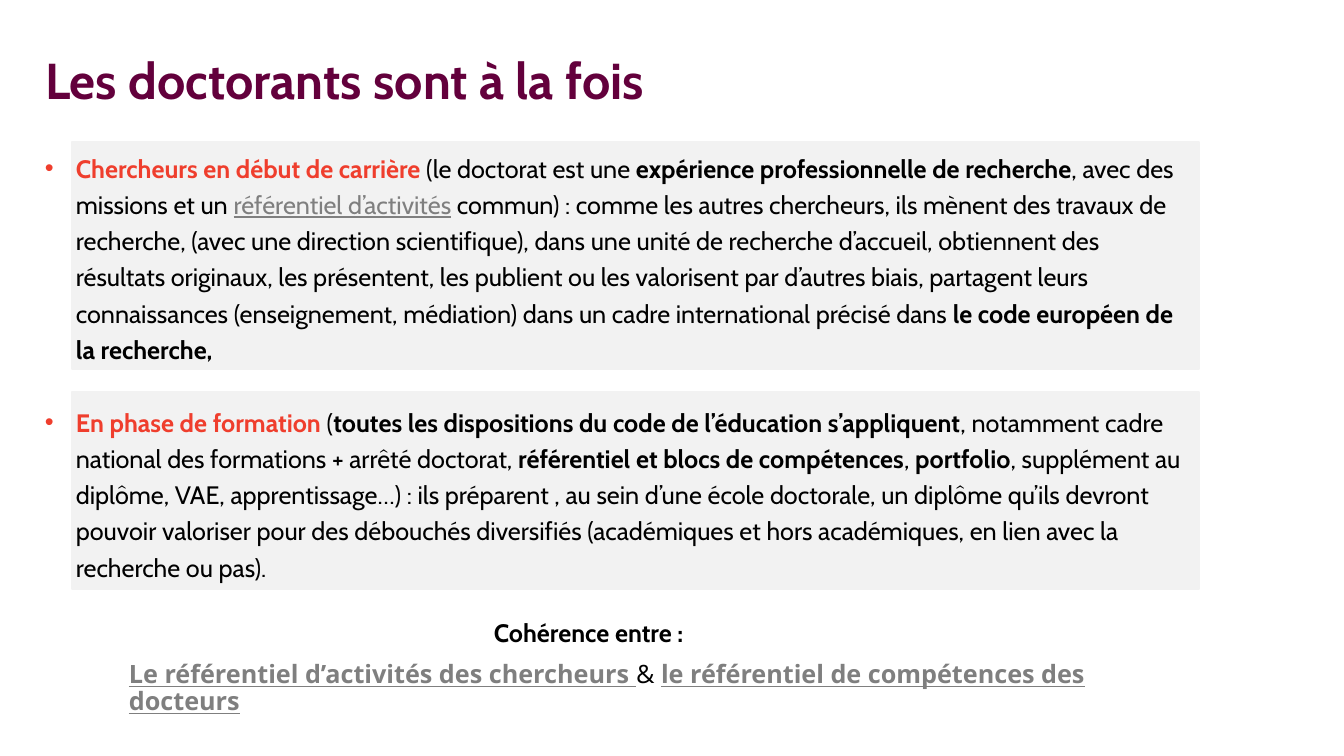
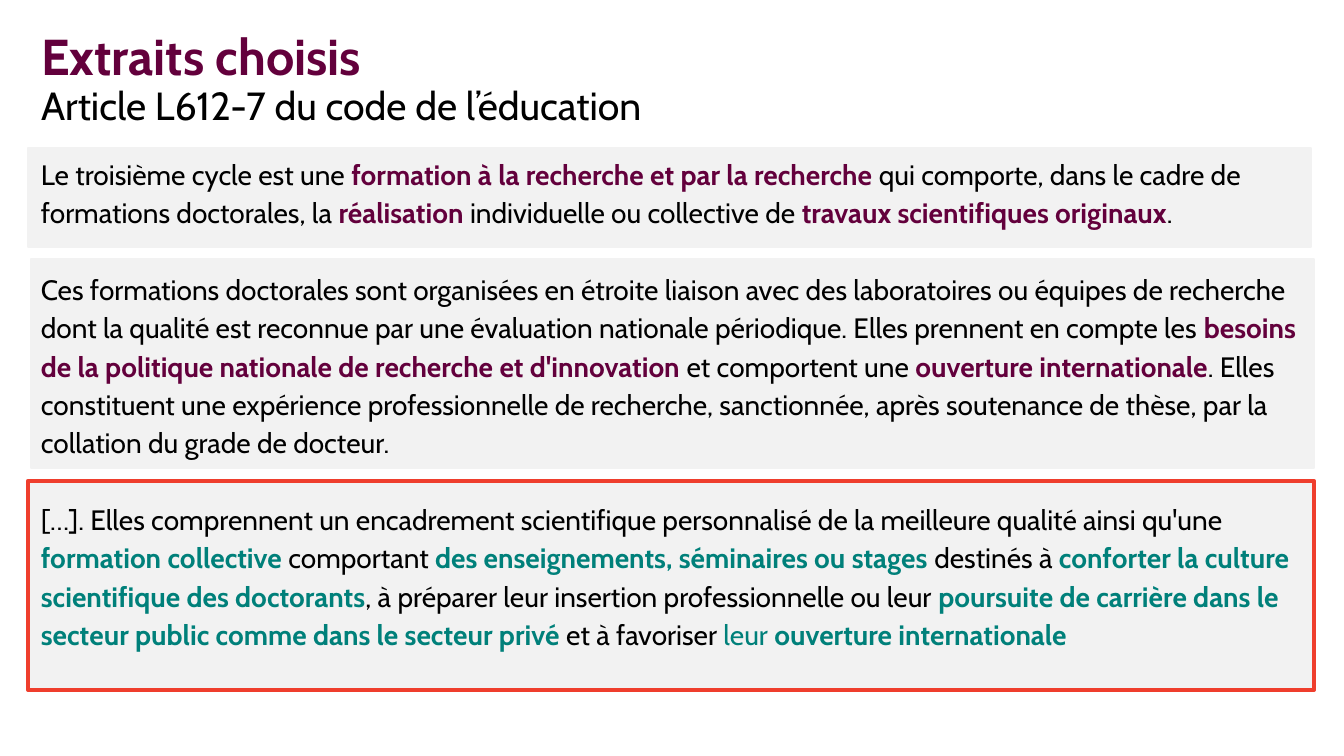
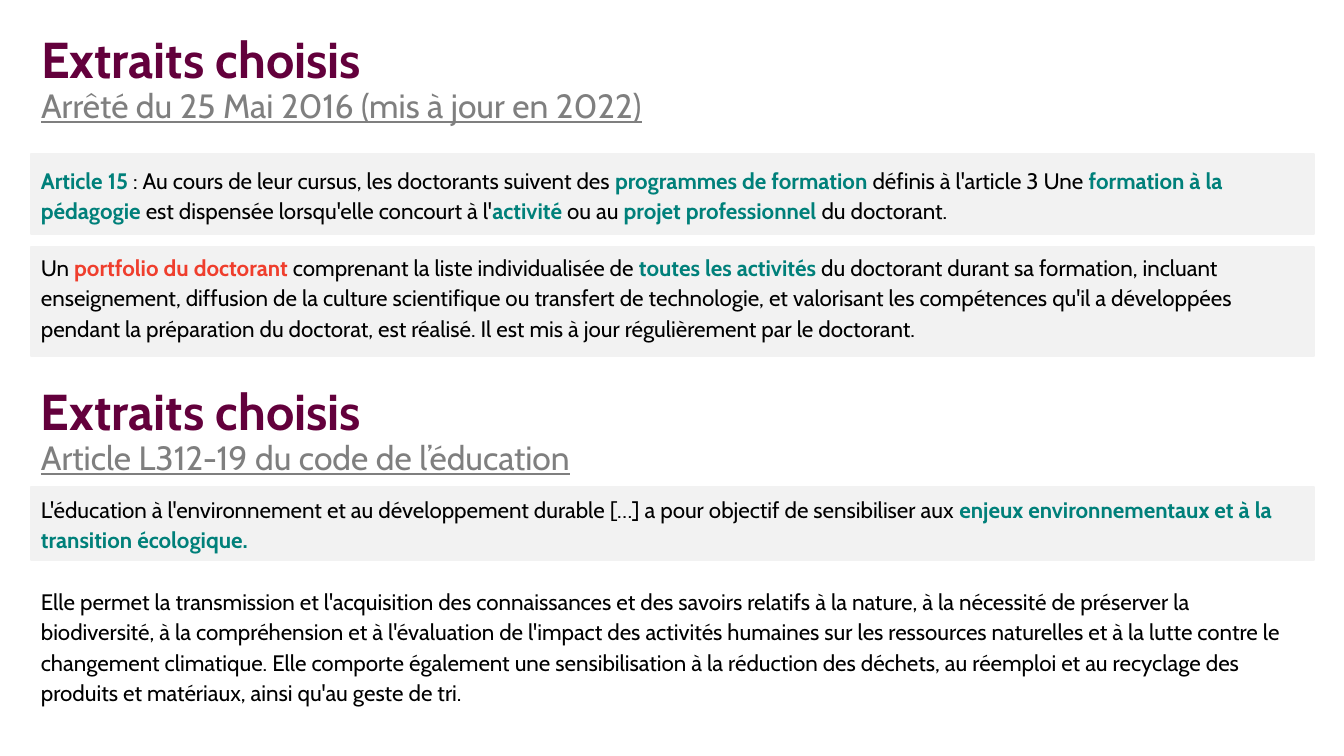
"""Build three slides on the legal framework of doctoral training."""
from lxml.etree import SubElement
from pptx import Presentation
from pptx.dml.color import RGBColor
from pptx.enum.shapes import MSO_SHAPE
from pptx.enum.text import MSO_ANCHOR, MSO_AUTO_SIZE, PP_ALIGN
from pptx.oxml.ns import qn
from pptx.util import Inches, Pt

PLUM = RGBColor(0x63, 0x00, 0x3C)
RED = RGBColor(0xEF, 0x3E, 0x2D)
TEAL = RGBColor(0x00, 0x80, 0x7A)
GREY = RGBColor(0x7F, 0x7F, 0x7F)
BLACK = RGBColor(0x00, 0x00, 0x00)
PALE = RGBColor(0xF2, 0xF2, 0xF2)

SLIDE_W, SLIDE_H = 1344, 756
SCALE = Inches(7.5) / SLIDE_H
FONT = "Cabin"

STYLES = {
    "plain": (BLACK, False, False),
    "bold": (BLACK, True, False),
    "plum": (PLUM, True, False),
    "red": (RED, True, False),
    "teal": (TEAL, True, False),
    "light teal": (TEAL, False, False),
    "link": (GREY, False, True),
    "bold link": (GREY, True, True),
}

EXCERPT = "Extraits choisis"
HEADING_BOX = (31, 26, 853, 109)

ROLES = [
    [
        ("Chercheurs en début de carrière ", "red"),
        ("(le doctorat est une ", "plain"),
        ("expérience professionnelle de recherche", "bold"),
        (", avec des missions et un ", "plain"),
        ("référentiel d’activités", "link"),
        (" commun) : comme les autres chercheurs, ils mènent des travaux de "
         "recherche, (avec une direction scientifique), dans une unité de "
         "recherche d’accueil, obtiennent des résultats originaux, les "
         "présentent, les publient ou les valorisent par d’autres biais, "
         "partagent leurs connaissances (enseignement, médiation) dans un "
         "cadre international précisé dans ", "plain"),
        ("le code européen de la recherche,", "bold"),
    ],
    [
        ("En phase de formation ", "red"),
        ("(", "plain"),
        ("toutes les dispositions du code de l’éducation s’appliquent", "bold"),
        (", notamment cadre national des formations + arrêté doctorat, ", "plain"),
        ("référentiel et blocs de compétences", "bold"),
        (", ", "plain"),
        ("portfolio", "bold"),
        (", supplément au diplôme, VAE, apprentissage…) : ils préparent , au "
         "sein d’une école doctorale, un diplôme qu’ils devront pouvoir "
         "valoriser pour des débouchés diversifiés (académiques et hors "
         "académiques, en lien avec la recherche ou pas).", "plain"),
    ],
]
COHERENCE = [[("Cohérence entre :", "bold")]]
REFERENCES = [[
    ("Le référentiel d’activités des chercheurs ", "bold link"),
    ("& ", "plain"),
    ("le référentiel de compétences des docteurs", "bold link"),
]]

THIRD_CYCLE = [
    [
        ("Le troisième cycle est une ", "plain"),
        ("formation à la recherche et par la recherche ", "plum"),
        ("qui comporte, dans le cadre de formations doctorales, la ", "plain"),
        ("réalisation", "plum"),
        (" individuelle ou collective de ", "plain"),
        ("travaux scientifiques originaux", "plum"),
        (".", "plain"),
    ],
    [
        ("Ces formations doctorales sont organisées en étroite liaison avec des "
         "laboratoires ou équipes de recherche dont la qualité est reconnue par "
         "une évaluation nationale périodique. Elles prennent en compte les ",
         "plain"),
        ("besoins de la politique nationale de recherche et d'innovation ", "plum"),
        ("et comportent une ", "plain"),
        ("ouverture internationale", "plum"),
        (". Elles constituent une expérience professionnelle de recherche, "
         "sanctionnée, après soutenance de thèse, par la collation du grade de "
         "docteur.", "plain"),
    ],
    [
        ("[…]. Elles comprennent un encadrement scientifique personnalisé de la "
         "meilleure qualité ainsi qu'une ", "plain"),
        ("formation collective ", "teal"),
        ("comportant ", "plain"),
        ("des enseignements, séminaires ou stages ", "teal"),
        ("destinés à ", "plain"),
        ("conforter la culture scientifique des doctorants", "teal"),
        (", à préparer leur insertion professionnelle ou leur ", "plain"),
        ("poursuite de carrière dans le secteur public comme dans le secteur "
         "privé ", "teal"),
        ("et à favoriser ", "plain"),
        ("leur ", "light teal"),
        ("ouverture internationale", "teal"),
    ],
]

TRAINING = [
    [
        ("Article 15 ", "teal"),
        (": Au cours de leur cursus, les doctorants suivent des ", "plain"),
        ("programmes de formation ", "teal"),
        ("définis à l'article 3 Une ", "plain"),
        ("formation à la pédagogie ", "teal"),
        ("est dispensée lorsqu'elle concourt à l'", "plain"),
        ("activité ", "teal"),
        ("ou au ", "plain"),
        ("projet professionnel ", "teal"),
        ("du doctorant.", "plain"),
    ],
    [
        ("Un ", "plain"),
        ("portfolio du doctorant ", "red"),
        ("comprenant la liste individualisée de ", "plain"),
        ("toutes les activités ", "teal"),
        ("du doctorant durant sa formation, incluant enseignement, diffusion de "
         "la culture scientifique ou transfert de technologie, et valorisant les "
         "compétences qu'il a développées pendant la préparation du doctorat, "
         "est réalisé. Il est mis à jour régulièrement par le doctorant.",
         "plain"),
    ],
]
ENVIRONMENT = [
    [
        ("L'éducation à l'environnement et au développement durable […] a pour "
         "objectif de sensibiliser aux ", "plain"),
        ("enjeux environnementaux et à la transition écologique.", "teal"),
    ],
    [
        ("Elle permet la transmission et l'acquisition des connaissances et des "
         "savoirs relatifs à la nature, à la nécessité de préserver la "
         "biodiversité, à la compréhension et à l'évaluation de l'impact des "
         "activités humaines sur les ressources naturelles et à la lutte contre "
         "le changement climatique. Elle comporte également une sensibilisation "
         "à la réduction des déchets, au réemploi et au recyclage des produits "
         "et matériaux, ainsi qu'au geste de tri.", "plain"),
    ],
]


def px(n):
    return round(n * SCALE)


def add_run(p, text, style, size, font=FONT):
    r = p.add_run()
    r.text = text
    f = r.font
    f.name, f.size = font, Pt(size)
    f.color.rgb, f.bold, f.underline = STYLES[style]


def add_rect(s, box, line=PALE, weight=1, filled=True):
    sp = s.shapes.add_shape(MSO_SHAPE.RECTANGLE, *map(px, box))
    sp.shadow.inherit = False
    if filled:
        sp.fill.solid()
        sp.fill.fore_color.rgb = PALE
    else:
        sp.fill.background()
    sp.line.color.rgb = line
    sp.line.width = Pt(weight)


def add_bullet(p):
    pPr = p._p.get_or_add_pPr()
    pPr.set("marL", str(px(31)))
    pPr.set("indent", str(-px(31)))
    SubElement(pPr, qn("a:buFont")).set("typeface", "Arial")
    SubElement(pPr, qn("a:buChar")).set("char", "•")


def add_text(s, box, paragraphs, size, spacing=1.0, gap=0, font=FONT,
             bullets=False, wrap=True, inset=None):
    tf = s.shapes.add_textbox(*map(px, box)).text_frame
    tf.word_wrap = wrap
    if inset is not None:
        tf.margin_left = tf.margin_right = px(inset)
        tf.margin_top = tf.margin_bottom = px(inset)
    for i, runs in enumerate(paragraphs):
        p = tf.add_paragraph() if i else tf.paragraphs[0]
        p.line_spacing = spacing
        if i:
            p.space_before = Pt(gap)
        if bullets:
            add_bullet(p)
        for text, style in runs:
            add_run(p, text, style, size, font)


def fill_heading(sp, box, title, subtitle=None, anchor=MSO_ANCHOR.MIDDLE):
    sp.left, sp.top, sp.width, sp.height = map(px, box)
    tf = sp.text_frame
    tf.word_wrap = True
    tf.auto_size = MSO_AUTO_SIZE.NONE
    tf.vertical_anchor = anchor
    lines = [(title, "plum", 36)] + ([subtitle] if subtitle else [])
    for i, line in enumerate(lines):
        p = tf.add_paragraph() if i else tf.paragraphs[0]
        p.alignment = PP_ALIGN.LEFT
        p.line_spacing = 0.9
        add_run(p, *line)


def new_slide(prs, bands, box, title, subtitle=None, anchor=MSO_ANCHOR.MIDDLE):
    s = prs.slides.add_slide(prs.slide_layouts[5])
    fill_heading(s.shapes.title, box, title, subtitle, anchor)
    for band in bands:
        add_rect(s, band)
    return s


def build_roles(prs):
    bands = [(72, 142, 1127, 227), (72, 392, 1127, 197)]
    s = new_slide(prs, bands, (35, 50, 1221, 65),
                  "Les doctorants sont à la fois", anchor=MSO_ANCHOR.BOTTOM)
    add_text(s, (35, 142, 1163, 447), ROLES, 18, 1.2, gap=26, bullets=True)
    add_text(s, (123, 656, 1066, 39), REFERENCES, 18, 0.9,
             font="Open Sans", inset=6)
    add_text(s, (484, 612, 230, 40), COHERENCE, 18, wrap=False)


def build_third_cycle(prs):
    bands = [(28, 148, 1283, 99), (31, 259, 1283, 209), (31, 481, 1283, 209)]
    s = new_slide(prs, bands, HEADING_BOX, EXCERPT,
                  ("Article L612-7 du code de l’éducation", "plain", 28))
    add_text(s, (31, 148, 1283, 548), THIRD_CYCLE, 20, 1.14, gap=27.4)
    add_rect(s, (28, 481, 1286, 209), RED, 3, filled=False)


def build_decree(prs):
    bands = [(31, 154, 1283, 80), (31, 247, 1283, 109), (31, 487, 1283, 73)]
    s = new_slide(prs, bands, HEADING_BOX, EXCERPT,
                  ("Arrêté du 25 Mai 2016 (mis à jour en 2022)", "link", 24))
    add_text(s, (31, 158, 1282, 194), TRAINING, 16, 1.14, gap=18.6)
    second_heading = s.shapes.add_textbox(0, 0, 0, 0)
    fill_heading(second_heading, (31, 378, 853, 109), EXCERPT,
                 ("Article L312-19 du code de l’éducation", "link", 24))
    add_text(s, (31, 487, 1270, 224), ENVIRONMENT, 16, 1.14, gap=22)


def main():
    prs = Presentation()
    prs.slide_width, prs.slide_height = px(SLIDE_W), px(SLIDE_H)
    for build in (build_roles, build_third_cycle, build_decree):
        build(prs)
    prs.save("out.pptx")


if __name__ == "__main__":
    main()
